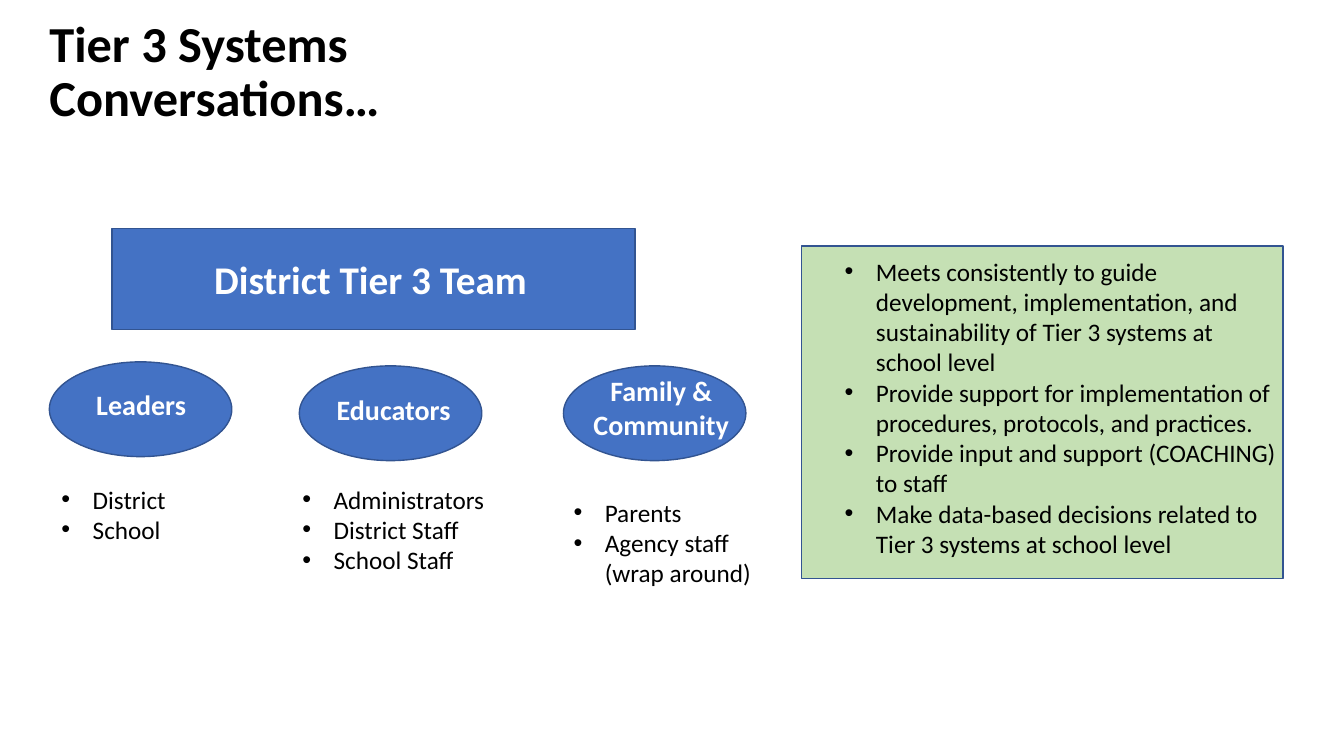
import pptx
import pptx.dml.color
import pptx.enum.shapes
import pptx.enum.text
import pptx.oxml.ns
import pptx.util
from lxml import etree

SHAPE = pptx.enum.shapes.MSO_SHAPE
ALIGN = pptx.enum.text.PP_ALIGN
ANCHOR = pptx.enum.text.MSO_ANCHOR


def colour(value):
    return pptx.dml.color.RGBColor.from_string(value)


class TeamSlide:
    """Style and current slide, measured on a grid of 133.33 columns by 75 rows."""

    COLUMNS, ROWS = 133.33, 75
    FONT = "Calibri"
    BLUE, EDGE, GREEN = "4472C4", "325491", "C5E0B4"
    BLACK, WHITE = "000000", "FFFFFF"

    def __init__(self, deck, layout):
        self.deck = deck
        self.slide = deck.slides.add_slide(deck.slide_layouts[layout])

    def place(self, column, row, columns, rows):
        across = self.deck.slide_width / self.COLUMNS
        down = self.deck.slide_height / self.ROWS
        return [round(n) for n in (column * across, row * down, columns * across, rows * down)]

    def move(self, holder, cell):
        holder.left, holder.top, holder.width, holder.height = self.place(*cell)

    def add_wording(self, paragraph, wording, size, ink, bold=False):
        run = paragraph.add_run()
        run.text = wording
        run.font.name = self.FONT
        run.font.size = pptx.util.Pt(size)
        run.font.bold = bold
        run.font.color.rgb = colour(ink)

    def title(self, wording, cell):
        heading = self.slide.shapes.title
        self.move(heading, cell)
        frame = heading.text_frame
        frame.word_wrap = True
        frame.auto_size = pptx.enum.text.MSO_AUTO_SIZE.NONE
        frame.vertical_anchor = ANCHOR.MIDDLE
        paragraph = frame.paragraphs[0]
        paragraph.alignment = ALIGN.LEFT
        paragraph.line_spacing = 0.9
        self.add_wording(paragraph, wording, 36, self.BLACK, bold=True)

    def block(self, kind, cell, fill):
        outline = self.slide.shapes.add_shape(kind, *self.place(*cell))
        outline.shadow.inherit = False
        outline.fill.solid()
        outline.fill.fore_color.rgb = colour(fill)
        outline.line.color.rgb = colour(self.EDGE)
        outline.line.width = pptx.util.Pt(1)

    def label(self, wording, cell, size):
        frame = self.slide.shapes.add_textbox(*self.place(*cell)).text_frame
        frame.word_wrap = True
        paragraph = frame.paragraphs[0]
        paragraph.alignment = ALIGN.CENTER
        self.add_wording(paragraph, wording, size, self.WHITE, bold=True)

    def bullets(self, index, entries, cell):
        body = self.slide.placeholders[index]
        self.move(body, cell)
        body.element.getparent().append(body.element)
        frame = body.text_frame
        frame.word_wrap = True
        frame.auto_size = pptx.enum.text.MSO_AUTO_SIZE.NONE
        frame.vertical_anchor = ANCHOR.TOP
        indent = pptx.util.Inches(0.31)
        for number, entry in enumerate(entries):
            paragraph = frame.add_paragraph() if number else frame.paragraphs[0]
            paragraph.alignment = ALIGN.LEFT
            paragraph.space_before = pptx.util.Pt(0)
            self.add_wording(paragraph, entry, 18, self.BLACK)
            properties = paragraph._p.get_or_add_pPr()
            properties.set("marL", str(indent))
            properties.set("indent", str(-indent))
            etree.SubElement(properties, pptx.oxml.ns.qn("a:buFont"), typeface="Arial")
            etree.SubElement(properties, pptx.oxml.ns.qn("a:buChar"), char="•")


DUTIES = [
    "Meets consistently to guide development, implementation, and sustainability "
    "of Tier 3 systems at school level",
    "Provide support for implementation of procedures, protocols, and practices.",
    "Provide input and support (COACHING) to staff",
    "Make data-based decisions related to Tier 3 systems at school level",
]

MEMBERS = [
    ("Leaders", (4.9, 35.9), (7.8, 38, 12.4, 4.4),
     ["District", "School"], (5.1, 47.5, 15.7, 7.1)),
    ("Educators", (29.7, 36.3), (32.1, 38.4, 13.9, 4.4),
     ["Administrators", "District Staff", "School Staff"], (29, 47.5, 21.9, 13.1)),
    ("Family & Community", (55.9, 36.3), (57.6, 36.6, 16, 7.7),
     ["Parents", "Agency staff (wrap around)"], (55.9, 48.8, 21.9, 13.1)),
]


def main():
    deck = pptx.Presentation()
    deck.slide_width = pptx.util.Inches(13.33)
    deck.slide_height = pptx.util.Inches(7.5)
    page = TeamSlide(deck, layout=4)
    page.title("Tier 3 Systems Conversations…", (3.9, 3.1, 63.7, 8.3))
    page.block(SHAPE.RECTANGLE, (79.5, 24.4, 47.8, 33), page.GREEN)
    page.bullets(1, DUTIES, (82.8, 24.9, 45.3, 37))
    page.block(SHAPE.RECTANGLE, (11.1, 22.7, 51.9, 10), page.BLUE)
    page.label("District Tier 3 Team", (12.7, 24.8, 48.1, 5.7), 28)
    for index, (group, corner, label_cell, people, list_cell) in enumerate(MEMBERS, 2):
        page.block(SHAPE.OVAL, (*corner, 18.1, 9.4), page.BLUE)
        page.label(group, label_cell, 20)
        page.bullets(index, people, list_cell)
    deck.save("out.pptx")


if __name__ == "__main__":
    main()
